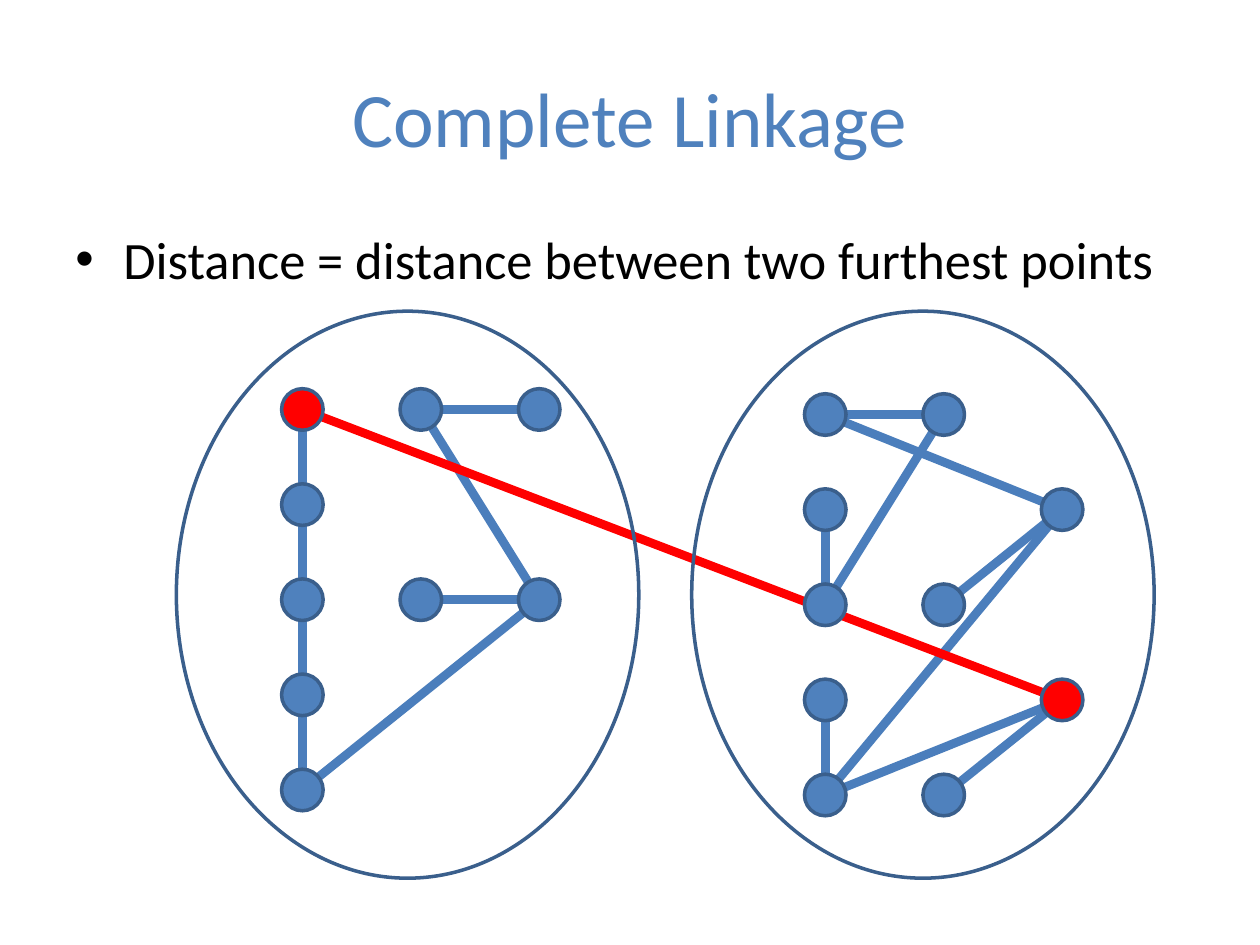
from dataclasses import dataclass

from lxml.etree import SubElement
from pptx import Presentation
from pptx.dml.color import RGBColor
from pptx.enum.shapes import MSO_CONNECTOR, MSO_SHAPE
from pptx.enum.text import MSO_ANCHOR, PP_ALIGN
from pptx.oxml.ns import qn
from pptx.util import Inches, Pt


@dataclass(frozen=True)
class Theme:
    font: str = "Calibri"
    title_size: int = 44
    body_size: int = 30
    edge_width: int = 5
    outline_width: int = 2
    blue: RGBColor = RGBColor(0x4F, 0x81, 0xBD)
    edge: RGBColor = RGBColor(0x4B, 0x7E, 0xBC)
    outline: RGBColor = RGBColor(0x3A, 0x5F, 0x8C)
    red: RGBColor = RGBColor(0xFF, 0x00, 0x00)
    black: RGBColor = RGBColor(0x00, 0x00, 0x00)


theme = Theme()


def write_text(shape, text, *, size, color, align=PP_ALIGN.LEFT,
               anchor=MSO_ANCHOR.TOP, bullet=None, indent=0):
    frame = shape.text_frame
    frame.word_wrap = True
    frame.vertical_anchor = anchor
    paragraph = frame.paragraphs[0]
    paragraph.text = text
    paragraph.alignment = align
    if bullet:
        properties = paragraph._p.get_or_add_pPr()
        properties.set("marL", str(Inches(indent)))
        properties.set("indent", str(-Inches(indent)))
        SubElement(properties, qn("a:buFont"), typeface="Arial")
        SubElement(properties, qn("a:buChar"), char=bullet)
    paragraph.font.name = theme.font
    paragraph.font.size = Pt(size)
    paragraph.font.color.rgb = color


def draw_edge(shapes, start, end, color):
    ends = [Inches(value) for value in (*start, *end)]
    connector = shapes.add_connector(MSO_CONNECTOR.STRAIGHT, *ends)
    connector.line.color.rgb = color
    connector.line.width = Pt(theme.edge_width)
    SubElement(connector._element.spPr, qn("a:effectLst"))


presentation = Presentation()
presentation.slide_width = Inches(10)
presentation.slide_height = Inches(7.5)
slide = presentation.slides.add_slide(presentation.slide_layouts[5])

# Title
title = slide.shapes.title
title.left, title.top = Inches(0.5), Inches(0.3)
title.width, title.height = Inches(9), Inches(1.25)
write_text(title, "Complete Linkage", size=theme.title_size, color=theme.blue,
           align=PP_ALIGN.CENTER, anchor=MSO_ANCHOR.MIDDLE)

# Clusters: points and edges are (column, row) places on a grid
column_gap, row_gap = 0.94, 0.755
clusters = [
    {
        "origin": (2.4, 3.25),
        "oval_left": 1.4,
        "furthest": (0, 0),
        "points": [(0, 0), (0, 1), (0, 2), (0, 3), (0, 4),
                   (1, 0), (2, 0), (1, 2), (2, 2)],
        "edges": [((0, 0), (0, 1)), ((0, 1), (0, 2)), ((0, 2), (0, 3)),
                  ((0, 3), (0, 4)), ((1, 0), (2, 0)), ((1, 2), (2, 2)),
                  ((1, 0), (2, 2)), ((0, 4), (2, 2))],
    },
    {
        "origin": (6.55, 3.29),
        "oval_left": 5.49,
        "furthest": (2, 3),
        "points": [(0, 0), (0, 1), (0, 2), (0, 3), (0, 4),
                   (1, 0), (1, 2), (1, 4), (2, 1), (2, 3)],
        "edges": [((0, 4), (2, 3)), ((1, 4), (2, 3)), ((0, 3), (0, 4)),
                  ((0, 0), (1, 0)), ((1, 2), (2, 1)), ((0, 1), (0, 2)),
                  ((0, 2), (1, 0)), ((0, 0), (2, 1)), ((0, 4), (2, 1))],
    },
]
for cluster in clusters:
    left, top = cluster["origin"]
    cluster["centers"] = {
        (column, row): (left + column * column_gap, top + row * row_gap)
        for column, row in cluster["points"]
    }

# Edges inside each cluster
edge_group = slide.shapes.add_group_shape()
for cluster in clusters:
    centers = cluster["centers"]
    for start, end in cluster["edges"]:
        draw_edge(edge_group.shapes, centers[start], centers[end], theme.edge)

# Longest distance between the clusters
furthest = [cluster["centers"][cluster["furthest"]] for cluster in clusters]
draw_edge(slide.shapes, *furthest, theme.red)

# Definition
definition = slide.shapes.add_textbox(
    Inches(0.5), Inches(1.75), Inches(9.42), Inches(0.65))
write_text(definition, "Distance = distance between two furthest points",
           size=theme.body_size, color=theme.black, bullet="•", indent=0.38)

# Cluster outlines and points
ovals = [(slide.shapes, cluster["oval_left"], 2.47, 3.67, 4.5, None)
         for cluster in clusters]
point_size = 0.33
point_group = slide.shapes.add_group_shape()
points = [
    (point_group.shapes, x - point_size / 2, y - point_size / 2,
     point_size, point_size,
     theme.red if place == cluster["furthest"] else theme.blue)
    for cluster in clusters
    for place, (x, y) in cluster["centers"].items()
]
for shapes, left, top, width, height, fill in ovals + points:
    ellipse = shapes.add_shape(MSO_SHAPE.OVAL, Inches(left), Inches(top),
                               Inches(width), Inches(height))
    ellipse.shadow.inherit = False
    ellipse.line.color.rgb = theme.outline
    ellipse.line.width = Pt(theme.outline_width)
    if fill is None:
        ellipse.fill.background()
    else:
        ellipse.fill.solid()
        ellipse.fill.fore_color.rgb = fill

presentation.save("out.pptx")
